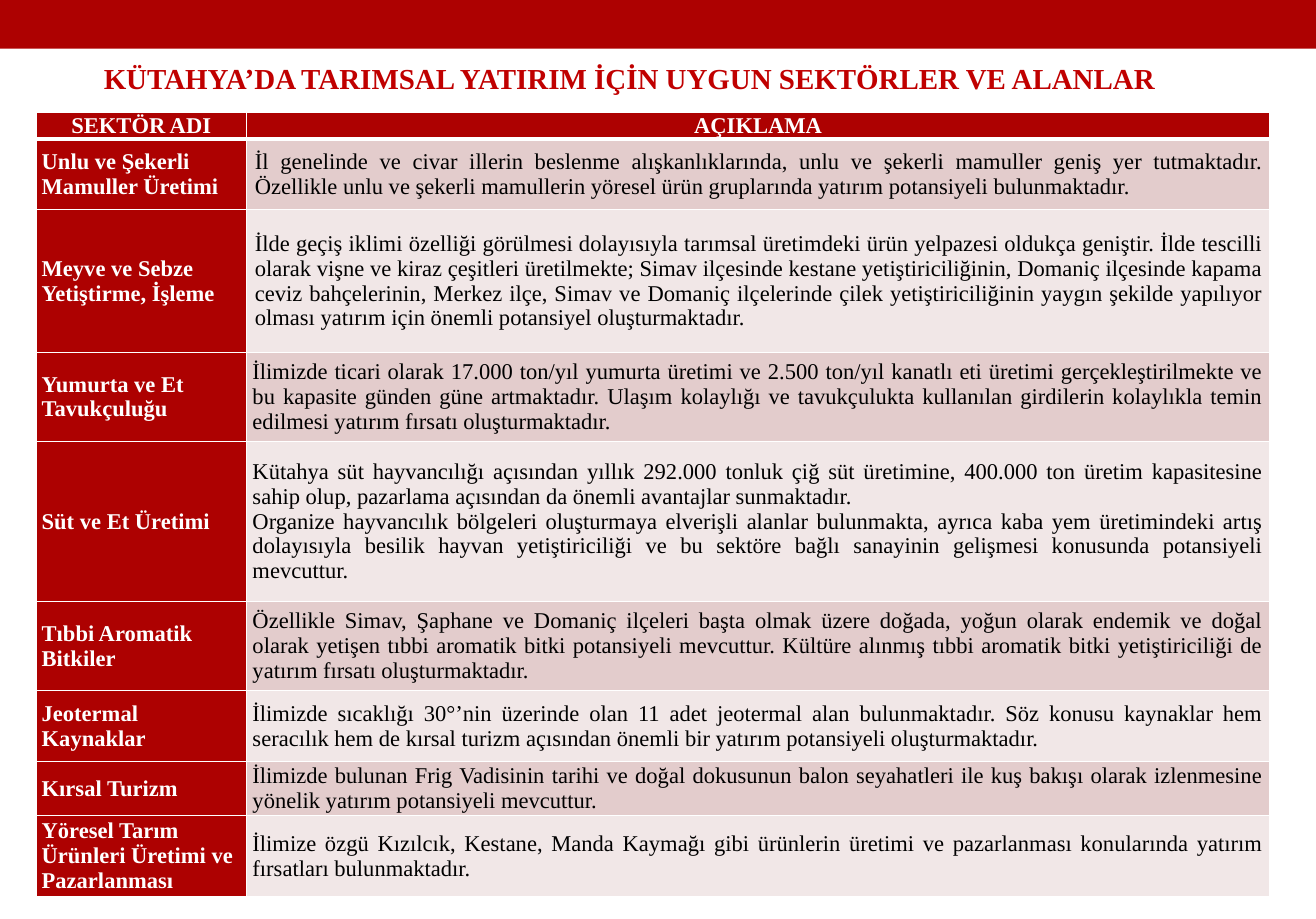
from lxml import etree
from pptx import Presentation
from pptx.dml.color import RGBColor
from pptx.enum.shapes import MSO_SHAPE
from pptx.enum.text import MSO_ANCHOR, PP_ALIGN
from pptx.oxml.ns import qn
from pptx.util import Pt

RECTANGLE = MSO_SHAPE.RECTANGLE
MIDDLE = MSO_ANCHOR.MIDDLE
LEFT, CENTER, JUSTIFY = PP_ALIGN.LEFT, PP_ALIGN.CENTER, PP_ALIGN.JUSTIFY
PX = 9144  # 100 px to the inch
FONT = "Times New Roman"
RED, TITLE_RED, WHITE, BLACK = "AD0101", "C00000", "FFFFFF", "000000"
BANDS = ["E3CCCC", "F1E7E7"]

COLUMN_WIDTHS = [182, 883]
HEADER_HEIGHT = 23
# Sector, description paragraphs, row height, description indent
SECTORS = [
    ("Unlu ve Şekerli Mamuller Üretimi",
     ["İl genelinde ve civar illerin beslenme alışkanlıklarında, unlu ve şekerli mamuller geniş yer "
      "tutmaktadır. Özellikle unlu ve şekerli mamullerin yöresel ürün gruplarında yatırım potansiyeli "
      "bulunmaktadır."], 61, 2),
    ("Meyve ve Sebze Yetiştirme, İşleme",
     ["İlde geçiş iklimi özelliği görülmesi dolayısıyla tarımsal üretimdeki ürün yelpazesi oldukça "
      "geniştir. İlde tescilli olarak vişne ve kiraz çeşitleri üretilmekte; Simav ilçesinde kestane "
      "yetiştiriciliğinin, Domaniç ilçesinde kapama ceviz bahçelerinin, Merkez ilçe, Simav ve Domaniç "
      "ilçelerinde çilek yetiştiriciliğinin yaygın şekilde yapılıyor olması yatırım için önemli "
      "potansiyel oluşturmaktadır."], 123, 2),
    ("Yumurta ve Et Tavukçuluğu",
     ["İlimizde ticari olarak 17.000 ton/yıl yumurta üretimi ve 2.500 ton/yıl kanatlı eti üretimi "
      "gerçekleştirilmekte ve bu kapasite günden güne artmaktadır. Ulaşım kolaylığı ve tavukçulukta "
      "kullanılan girdilerin kolaylıkla temin edilmesi yatırım fırsatı oluşturmaktadır."], 77, 0),
    ("Süt ve Et Üretimi",
     ["Kütahya süt hayvancılığı açısından yıllık 292.000 tonluk çiğ süt üretimine, 400.000 ton üretim "
      "kapasitesine sahip olup, pazarlama açısından da önemli avantajlar sunmaktadır.",
      "Organize hayvancılık bölgeleri oluşturmaya elverişli alanlar bulunmakta, ayrıca kaba yem "
      "üretimindeki artış dolayısıyla besilik hayvan yetiştiriciliği ve bu sektöre bağlı sanayinin "
      "gelişmesi konusunda potansiyeli mevcuttur."], 138, 0),
    ("Tıbbi Aromatik Bitkiler",
     ["Özellikle Simav, Şaphane ve Domaniç ilçeleri başta olmak üzere doğada, yoğun olarak endemik ve "
      "doğal olarak yetişen tıbbi aromatik bitki potansiyeli mevcuttur. Kültüre alınmış tıbbi aromatik "
      "bitki yetiştiriciliği de yatırım fırsatı oluşturmaktadır."], 77, 0),
    ("Jeotermal Kaynaklar",
     ["İlimizde sıcaklığı 30°’nin üzerinde olan 11 adet jeotermal alan bulunmaktadır. Söz konusu "
      "kaynaklar hem seracılık hem de kırsal turizm açısından önemli bir yatırım potansiyeli "
      "oluşturmaktadır."], 61, 0),
    ("Kırsal Turizm",
     ["İlimizde bulunan Frig Vadisinin tarihi ve doğal dokusunun balon seyahatleri ile kuş bakışı "
      "olarak izlenmesine yönelik yatırım potansiyeli mevcuttur."], 47, 0),
    ("Yöresel Tarım Ürünleri Üretimi ve Pazarlanması",
     ["İlimize özgü Kızılcık, Kestane, Manda Kaymağı gibi ürünlerin üretimi ve pazarlanması "
      "konularında yatırım fırsatları bulunmaktadır."], 70, 0),
]


def px(length):
    return length * PX


def write(frame, paragraphs, size=14, color=WHITE, bold=True, align=LEFT, indent=0):
    frame.word_wrap = True
    for index, text in enumerate(paragraphs):
        para = frame.add_paragraph() if index else frame.paragraphs[0]
        para.alignment = align
        para.space_before = Pt(0)
        if indent:
            para._p.get_or_add_pPr().set("marL", str(px(indent)))
        span = para.add_run()
        span.text = text
        span.font.name = FONT
        span.font.size = Pt(size)
        span.font.bold = bold
        span.font.color.rgb = RGBColor.from_string(color)


deck = Presentation()
deck.slide_width, deck.slide_height = px(1136), px(793)
page = deck.slides.add_slide(deck.slide_layouts[5])

# Top band
band = page.shapes.add_shape(RECTANGLE, 0, 0, px(1136), px(42))
band.shadow.inherit = False
band.fill.solid()
band.fill.fore_color.rgb = RGBColor.from_string(RED)
band.line.fill.background()

# Title
title = page.shapes.title
title.left, title.top, title.width, title.height = px(31), px(47), px(1025), px(40)
title.text_frame.vertical_anchor = MIDDLE
write(title.text_frame, ["KÜTAHYA’DA TARIMSAL YATIRIM İÇİN UYGUN SEKTÖRLER VE ALANLAR"],
      size=18, color=TITLE_RED, align=CENTER)

# Sector table
heights = [HEADER_HEIGHT] + [sector[2] for sector in SECTORS]
table = page.shapes.add_table(len(heights), len(COLUMN_WIDTHS), px(31), px(97),
                              px(sum(COLUMN_WIDTHS)), px(sum(heights))).table
for column, width in zip(table.columns, COLUMN_WIDTHS):
    column.width = px(width)
for row, height in zip(table.rows, heights):
    row.height = px(height)

# Table text
for cell, heading in zip(table.rows[0].cells, ["SEKTÖR ADI", "AÇIKLAMA"]):
    write(cell.text_frame, [heading], align=CENTER)
for number, (name, description, height, indent) in enumerate(SECTORS, start=1):
    write(table.cell(number, 0).text_frame, [name])
    write(table.cell(number, 1).text_frame, description,
          color=BLACK, bold=False, align=JUSTIFY, indent=indent)

# Cell margins, borders and fills
for number, row in enumerate(table.rows):
    for column, cell in enumerate(row.cells):
        cell.vertical_anchor = MIDDLE
        cell.margin_left = cell.margin_right = px(5)
        cell.margin_top = cell.margin_bottom = 0
        widths = {"a:lnL": 1, "a:lnR": 1,
                  "a:lnT": 3 if number == 1 else 1, "a:lnB": 3 if number == 0 else 1}
        for side, width in widths.items():
            border = etree.SubElement(cell._tc.get_or_add_tcPr(), qn(side), w=str(Pt(width)))
            paint = etree.SubElement(border, qn("a:solidFill"))
            etree.SubElement(paint, qn("a:srgbClr"), val=WHITE)
        cell.fill.solid()
        fill = RED if number == 0 or column == 0 else BANDS[(number - 1) % 2]
        cell.fill.fore_color.rgb = RGBColor.from_string(fill)

deck.save("out.pptx")
